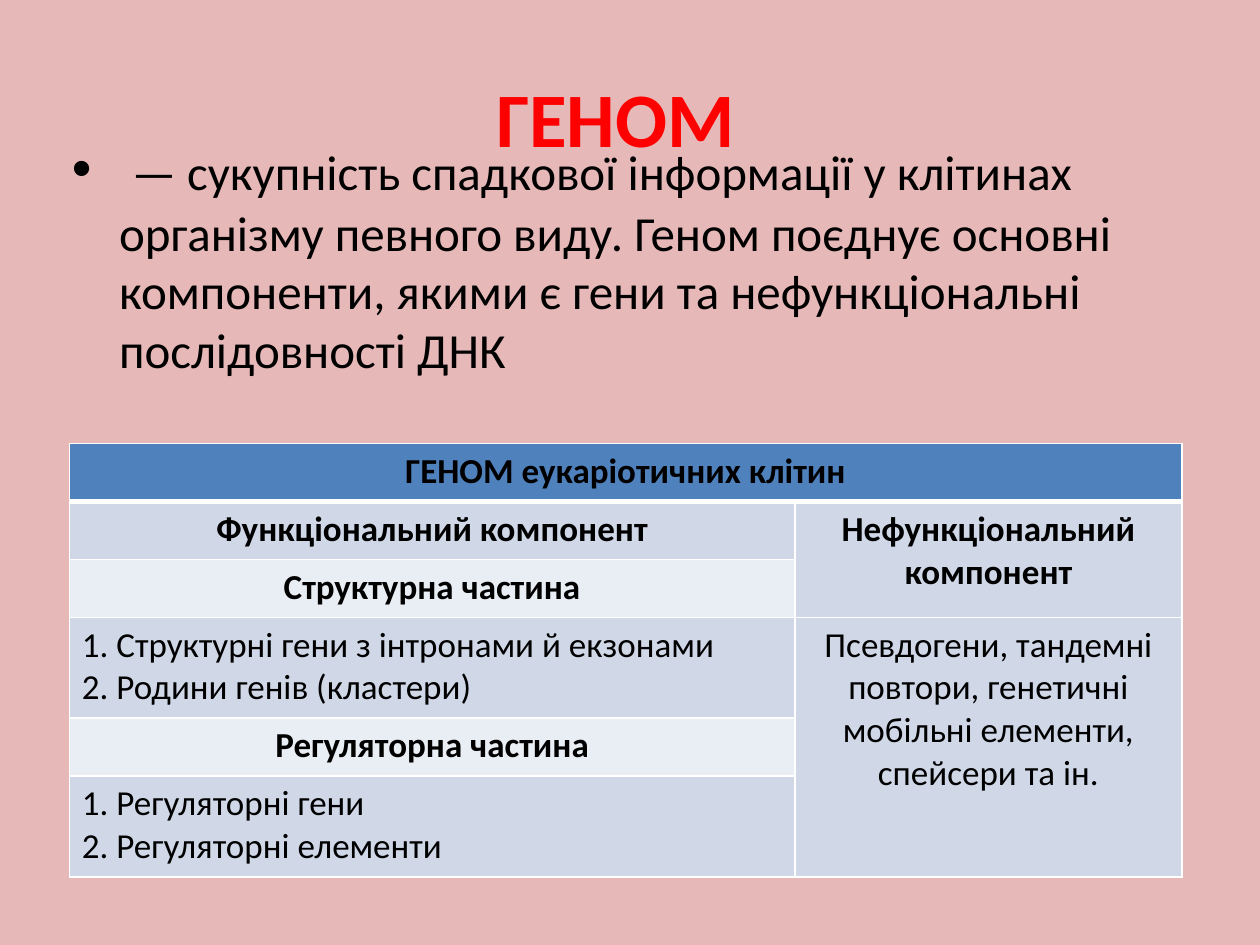
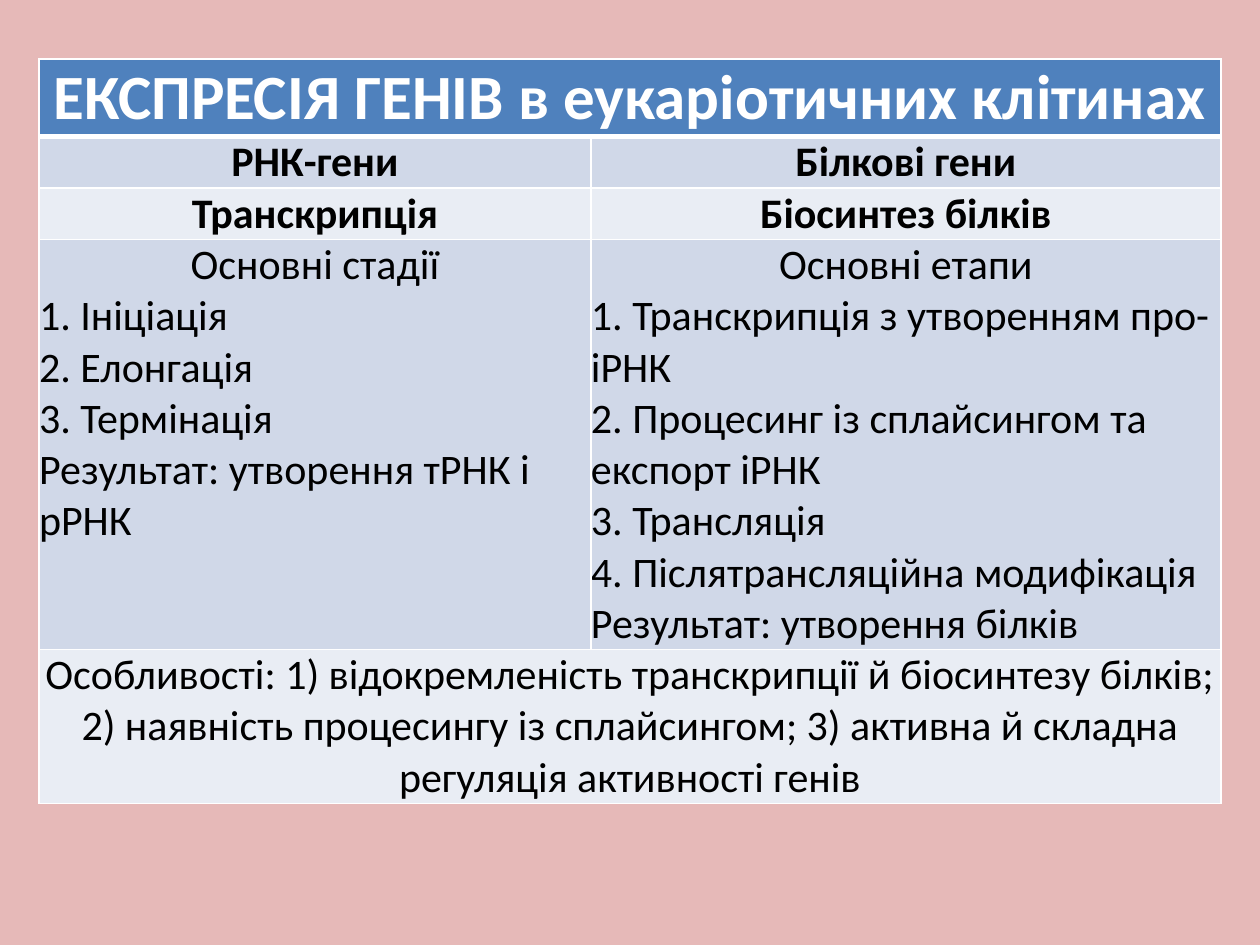
from dataclasses import dataclass

from lxml import etree
from pptx import Presentation
from pptx import util as u
from pptx.dml.color import RGBColor
from pptx.enum import text
from pptx.oxml.ns import qn


@dataclass(frozen=True)
class Theme:
    """Colours, font and type sizes shared by the slides."""
    font: str = "Calibri"
    background: str = "E6B9B8"
    title: str = "FF0000"
    ink: str = "000000"
    light: str = "FFFFFF"
    header: str = "4F81BD"
    band: str = "D0D8E8"
    pale_band: str = "E9EDF4"
    title_size: int = 44
    bullet_size: int = 32
    body_size: int = 28
    genome_size: int = 20
    banner_size: int = 36
    expression_size: int = 24
    rule: int = 1
    header_rule: int = 3


@dataclass(frozen=True)
class Entry:
    """A table cell: centred lines, then left-aligned lines."""
    row: int
    column: int
    centred: tuple = ()
    listed: tuple = ()
    bold: bool = False
    row_span: int = 1
    column_span: int = 1
    top: bool = False


THEME = Theme()

GENOME = [
    Entry(0, 0, ("ГЕНОМ еукаріотичних клітин",), bold=True, column_span=2),
    Entry(1, 0, ("Функціональний компонент",), bold=True),
    Entry(1, 1, ("Нефункціональний компонент",), bold=True, row_span=2),
    Entry(2, 0, ("Структурна частина",), bold=True),
    Entry(3, 0, listed=("1. Структурні гени з інтронами й екзонами",
                        "2. Родини генів (кластери)")),
    Entry(3, 1, ("Псевдогени, тандемні повтори, генетичні мобільні елементи, "
                 "спейсери та ін.",), row_span=3),
    Entry(4, 0, ("Регуляторна частина",), bold=True),
    Entry(5, 0, listed=("1. Регуляторні гени", "2. Регуляторні елементи")),
]

EXPRESSION = [
    Entry(0, 0, ("ЕКСПРЕСІЯ ГЕНІВ в еукаріотичних клітинах",), bold=True, column_span=2),
    Entry(1, 0, ("РНК-гени",), bold=True),
    Entry(1, 1, ("Білкові гени",), bold=True),
    Entry(2, 0, ("Транскрипція",), bold=True),
    Entry(2, 1, ("Біосинтез білків",), bold=True),
    Entry(3, 0, ("Основні стадії",),
          ("1. Ініціація", "2. Елонгація", "3. Термінація",
           "Результат: утворення тРНК і рРНК"), top=True),
    Entry(3, 1, ("Основні етапи",),
          ("1. Транскрипція з утворенням про-іРНК",
           "2. Процесинг із сплайсингом та експорт іРНК",
           "3. Трансляція", "4. Післятрансляційна модифікація",
           "Результат: утворення білків")),
    Entry(4, 0, ("Особливості: 1) відокремленість транскрипції й біосинтезу білків; "
                 "2) наявність процесингу із сплайсингом; "
                 "3) активна й складна регуляція активності генів",), column_span=2),
]


def write(paragraph, content, size, color=THEME.ink, bold=False, align=None):
    """Add one formatted run to a paragraph."""
    run = paragraph.add_run()
    run.text = content
    run.font.name = THEME.font
    run.font.size = u.Pt(size)
    run.font.bold = bold
    run.font.color.rgb = RGBColor.from_string(color)
    if align is not None:
        paragraph.alignment = align


def place(shape, box):
    """Move a shape to a box given in inches."""
    shape.left, shape.top, shape.width, shape.height = map(u.Inches, box)


def draw_borders(cell, widths):
    """Outline a cell with left, right, top and bottom widths in points."""
    properties = cell._tc.get_or_add_tcPr()
    for index, (side, width) in enumerate(zip("LRTB", widths)):
        line = etree.Element(qn(f"a:ln{side}"), w=str(u.Pt(width)))
        fill = etree.SubElement(line, qn("a:solidFill"))
        etree.SubElement(fill, qn("a:srgbClr"), val=THEME.light)
        properties.insert(index, line)


def style_grid(table):
    """Fill alternate rows and rule all cells, with a thick line below the header."""
    for row_index, row in enumerate(table.rows):
        color = THEME.band if row_index % 2 else THEME.pale_band
        if row_index == 0:
            color = THEME.header
        above = THEME.header_rule if row_index == 1 else THEME.rule
        below = THEME.header_rule if row_index == 0 else THEME.rule
        for cell in row.cells:
            cell.fill.solid()
            cell.fill.fore_color.rgb = RGBColor.from_string(color)
            draw_borders(cell, (THEME.rule, THEME.rule, above, below))


def fill_cell(cell, entry, **style):
    """Write the centred and listed lines of an entry into its cell."""
    lines = [(line, text.PP_ALIGN.CENTER) for line in entry.centred]
    lines += [(line, text.PP_ALIGN.LEFT) for line in entry.listed]
    frame = cell.text_frame
    for index, (line, align) in enumerate(lines):
        paragraph = frame.add_paragraph() if index else frame.paragraphs[0]
        write(paragraph, line, bold=entry.bold, align=align, **style)


def add_grid(slide, box, columns, rows, entries, size, header_style, tight=False):
    """Add a banded table in a box; tight cells have no margins and sit low."""
    frame = slide.shapes.add_table(len(rows), len(columns), *map(u.Inches, box))
    table = frame.table
    for column, width in zip(table.columns, columns):
        column.width = u.Inches(width)
    for row, height in zip(table.rows, rows):
        row.height = u.Inches(height)
    style_grid(table)
    for entry in entries:
        cell = table.cell(entry.row, entry.column)
        if entry.row_span > 1 or entry.column_span > 1:
            cell.merge(table.cell(entry.row + entry.row_span - 1,
                                  entry.column + entry.column_span - 1))
        if tight:
            cell.margin_left = cell.margin_right = cell.margin_top = cell.margin_bottom = 0
            if not entry.top:
                cell.vertical_anchor = text.MSO_ANCHOR.BOTTOM
        fill_cell(cell, entry, **(header_style if entry.row == 0 else {"size": size}))


def add_definition(slide, title_box, body_box):
    """Fill the title and body placeholders with the term and its meaning."""
    title, body = slide.shapes.title, slide.placeholders[1]
    place(title, title_box)
    title.text_frame.vertical_anchor = text.MSO_ANCHOR.MIDDLE
    write(title.text_frame.paragraphs[0], "ГЕНОМ", THEME.title_size, THEME.title,
          bold=True, align=text.PP_ALIGN.CENTER)
    place(body, body_box)
    paragraph = body.text_frame.paragraphs[0]
    write(paragraph, " ", THEME.bullet_size)
    write(paragraph, "— сукупність спадкової інформації у клітинах організму певного виду. "
          "Геном поєднує основні компоненти, якими є гени та нефункціональні "
          "послідовності ДНК", THEME.body_size)


def build_genome_slide(presentation):
    """Build the slide that defines the genome."""
    slide = presentation.slides.add_slide(presentation.slide_layouts[1])
    add_definition(slide, (0, 0.3, 9.77, 1.25), (0.47, 1.02, 9, 3.13))
    add_grid(slide, (0.55, 3.52, 8.83, 3.45), (5.76, 3.07),
             (0.46, 0.46, 0.46, 0.8, 0.46, 0.8), GENOME, THEME.genome_size,
             {"size": THEME.genome_size})


def build_expression_slide(presentation):
    """Build the slide that compares the expression of two kinds of genes."""
    slide = presentation.slides.add_slide(presentation.slide_layouts[6])
    add_grid(slide, (0.31, 0.47, 9.38, 5.9), (4.38, 5),
             (0.61, 0.41, 0.41, 3.25, 1.22), EXPRESSION, THEME.expression_size,
             {"size": THEME.banner_size, "color": THEME.light}, tight=True)


def main():
    """Build and save the presentation."""
    presentation = Presentation()
    presentation.slide_width, presentation.slide_height = u.Inches(10), u.Inches(7.5)
    background = presentation.slide_master.background.fill
    background.solid()
    background.fore_color.rgb = RGBColor.from_string(THEME.background)
    build_genome_slide(presentation)
    build_expression_slide(presentation)
    presentation.save("out.pptx")


if __name__ == "__main__":
    main()
